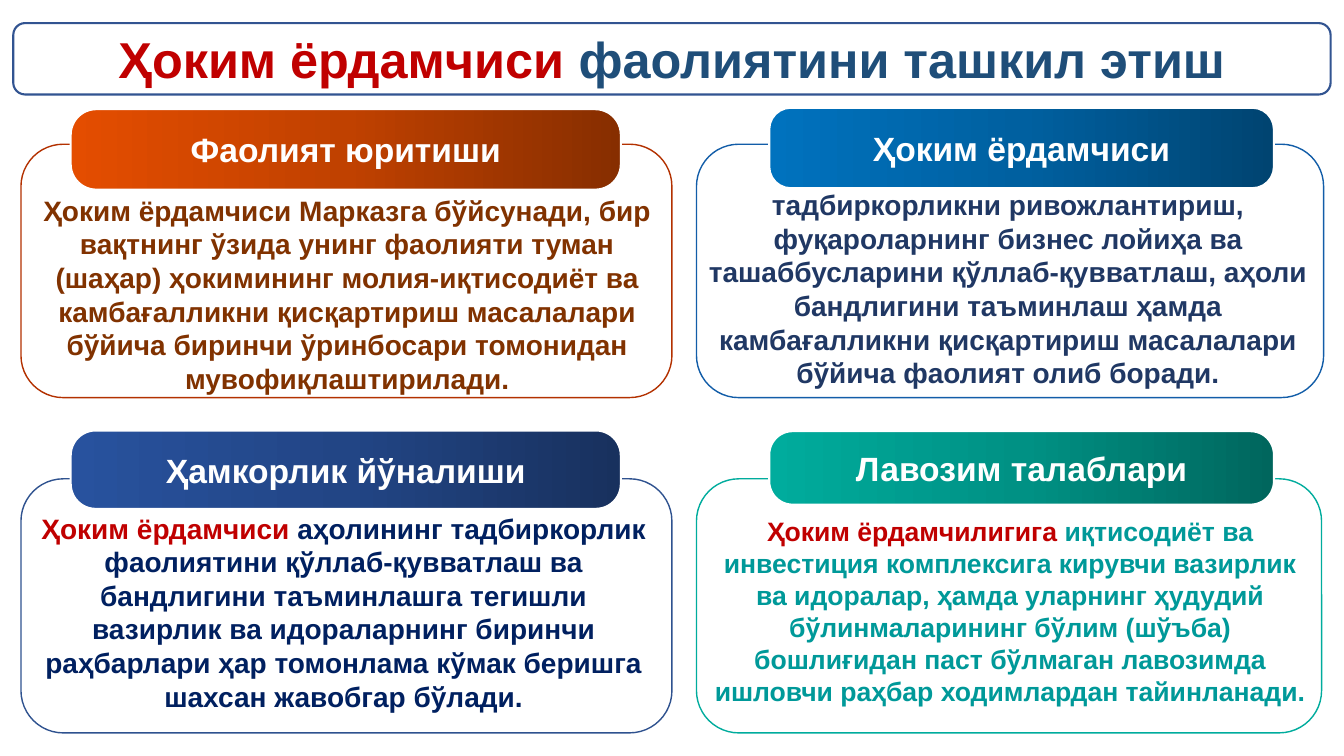
"""Build a one-slide overview of how the governor's assistant works."""
from copy import deepcopy
from typing import Any, NamedTuple

from pptx import Presentation
from pptx import util as u
from pptx.dml.color import RGBColor
from pptx.enum import shapes, text
from pptx.oxml import ns

WHITE = RGBColor(0xFF, 0xFF, 0xFF)
RED = RGBColor(0xC0, 0x00, 0x00)
TITLE_BLUE = RGBColor(0x1F, 0x4E, 0x79)
TITLE_LINE = RGBColor(0x32, 0x54, 0x91)
BROWN = RGBColor(0x81, 0x32, 0x00)
NAVY = RGBColor(0x20, 0x38, 0x64)
DARK_NAVY = RGBColor(0x00, 0x20, 0x60)
TEAL = RGBColor(0x00, 0x99, 0x99)
ORANGE_LINE = RGBColor(0xB3, 0x31, 0x00)
BLUE_LINE = RGBColor(0x12, 0x5D, 0xA8)
INDIGO_LINE = RGBColor(0x2F, 0x52, 0x8F)
TEAL_LINE = RGBColor(0x00, 0xAC, 0x9D)
ORANGES = (RGBColor(0x87, 0x2E, 0x00), RGBColor(0xC0, 0x41, 0x00), RGBColor(0xE4, 0x4D, 0x00))
BLUES = (RGBColor(0x00, 0x44, 0x71), RGBColor(0x00, 0x60, 0xA0), RGBColor(0x00, 0x72, 0xBE))
INDIGOS = (RGBColor(0x18, 0x31, 0x5E), RGBColor(0x22, 0x45, 0x85), RGBColor(0x28, 0x52, 0x9E))
TEALS = (RGBColor(0x00, 0x66, 0x5D), RGBColor(0x00, 0x91, 0x84), RGBColor(0x00, 0xAC, 0x9D))


class Area(NamedTuple):
    left: float
    top: float
    width: float
    height: float

    def lengths(self) -> list[u.Length]:
        return [u.Pt(value) for value in self]


class Span(NamedTuple):
    words: str
    color: RGBColor


class Card(NamedTuple):
    panel: Area
    line: RGBColor
    header: Area
    rounding: float
    shades: tuple[RGBColor, ...]
    heading: str
    body: Area
    size: float
    spans: list[Span]


TITLE_AREA = Area(9.5, 16.5, 941, 51)
TITLE = [Span("Ҳоким ёрдамчиси ", RED), Span("фаолиятини ташкил этиш", TITLE_BLUE)]
CARDS = [
    Card(Area(15, 103, 465, 181), ORANGE_LINE, Area(50.5, 78, 393, 57.5), 0.318, ORANGES,
         "Фаолият юритиши", Area(21.5, 134.5, 453, 152.5), 20,
         [Span("Ҳоким ёрдамчиси Марказга бўйсунади, бир вақтнинг ўзида унинг фаолияти "
               "туман (шаҳар) ҳокимининг молия-иқтисодиёт ва камбағалликни қисқартириш "
               "масалалари бўйича биринчи ўринбосари томонидан мувофиқлаштирилади.", BROWN)]),
    Card(Area(497.5, 342, 446.5, 181.5), TEAL_LINE, Area(549.5, 308, 360.5, 52.5), 0.318, TEALS,
         "Лавозим талаблари", Area(497.5, 364.5, 448, 145.5), 19,
         [Span("Ҳоким ёрдамчилигига ", RED),
          Span("иқтисодиёт ва инвестиция комплексига кирувчи вазирлик ва идоралар, ҳамда "
               "уларнинг ҳудудий бўлинмаларининг бўлим (шўъба) бошлиғидан паст бўлмаган "
               "лавозимда ишловчи раҳбар ходимлардан тайинланади.", TEAL)]),
    Card(Area(497.5, 103, 448, 181), BLUE_LINE, Area(549.5, 77, 360.5, 57.5), 0.267, BLUES,
         "Ҳоким ёрдамчиси", Area(497.5, 130.5, 445, 152.5), 20,
         [Span("тадбиркорликни ривожлантириш, фуқароларнинг бизнес лойиҳа ва ташаббусларини "
               "қўллаб-қувватлаш, аҳоли бандлигини таъминлаш ҳамда камбағалликни "
               "қисқартириш масалалари бўйича фаолият олиб боради.", NAVY)]),
    Card(Area(15, 342, 465, 181.5), INDIGO_LINE, Area(50.5, 307.5, 393, 56), 0.318, INDIGOS,
         "Ҳамкорлик йўналиши", Area(16.5, 361.5, 458, 152.5), 20,
         [Span("Ҳоким ёрдамчиси", RED),
          Span(" аҳолининг тадбиркорлик фаолиятини қўллаб-қувватлаш ва бандлигини "
               "таъминлашга тегишли вазирлик ва идораларнинг биринчи раҳбарлари ҳар "
               "томонлама кўмак беришга шахсан жавобгар бўлади.", DARK_NAVY)]),
]


def apply_format(target: Any, values: dict[str, Any]) -> None:
    for name, value in values.items():
        setattr(target, name, value)


def write(box: Any, spans: list[Span], size: float, anchor: Any) -> None:
    apply_format(box.text_frame, {"word_wrap": True, "auto_size": text.MSO_AUTO_SIZE.NONE,
                                  "vertical_anchor": anchor})
    para = box.text_frame.paragraphs[0]
    para.alignment = text.PP_ALIGN.CENTER
    for span in spans:
        run = para.add_run()
        run.text = span.words
        apply_format(run.font, {"name": "Arial", "size": u.Pt(size), "bold": True})
        run.font.color.rgb = span.color


def add_rounded(page: Any, area: Area, line: RGBColor, weight: float) -> Any:
    box = page.shapes.add_shape(shapes.MSO_SHAPE.ROUNDED_RECTANGLE, *area.lengths())
    box.shadow.inherit = False
    box.fill.solid()
    box.fill.fore_color.rgb = WHITE
    box.line.color.rgb = line
    box.line.width = u.Pt(weight)
    return box


def shade(box: Any, colors: tuple[RGBColor, ...]) -> None:
    box.fill.gradient()
    box.fill.gradient_angle = 180
    first = box._element.spPr.find(".//" + ns.qn("a:gs"))
    first.addnext(deepcopy(first))
    for stop, color, position in zip(box.fill.gradient_stops, colors, (0, 0.5, 1)):
        stop.color.rgb = color
        stop.position = position


def add_title(page: Any) -> None:
    add_rounded(page, TITLE_AREA, TITLE_LINE, 1.5)
    title = page.shapes.title
    apply_format(title, dict(zip(("left", "top", "width", "height"), TITLE_AREA.lengths())))
    write(title, TITLE, 36, text.MSO_ANCHOR.MIDDLE)
    page.shapes._spTree.append(title._element)


def add_card(page: Any, card: Card) -> None:
    add_rounded(page, card.panel, card.line, 1)
    header = add_rounded(page, card.header, WHITE, 1.5)
    header.adjustments[0] = card.rounding
    shade(header, card.shades)
    write(header, [Span(card.heading, WHITE)], 24, text.MSO_ANCHOR.MIDDLE)
    body = page.shapes.add_textbox(*card.body.lengths())
    write(body, card.spans, card.size, text.MSO_ANCHOR.TOP)


def main() -> None:
    deck = Presentation()
    apply_format(deck, {"slide_width": u.Pt(960), "slide_height": u.Pt(540)})
    page = deck.slides.add_slide(deck.slide_layouts.get_by_name("Title Only"))
    add_title(page)
    for card in CARDS:
        add_card(page, card)
    deck.save("out.pptx")


if __name__ == "__main__":
    main()
